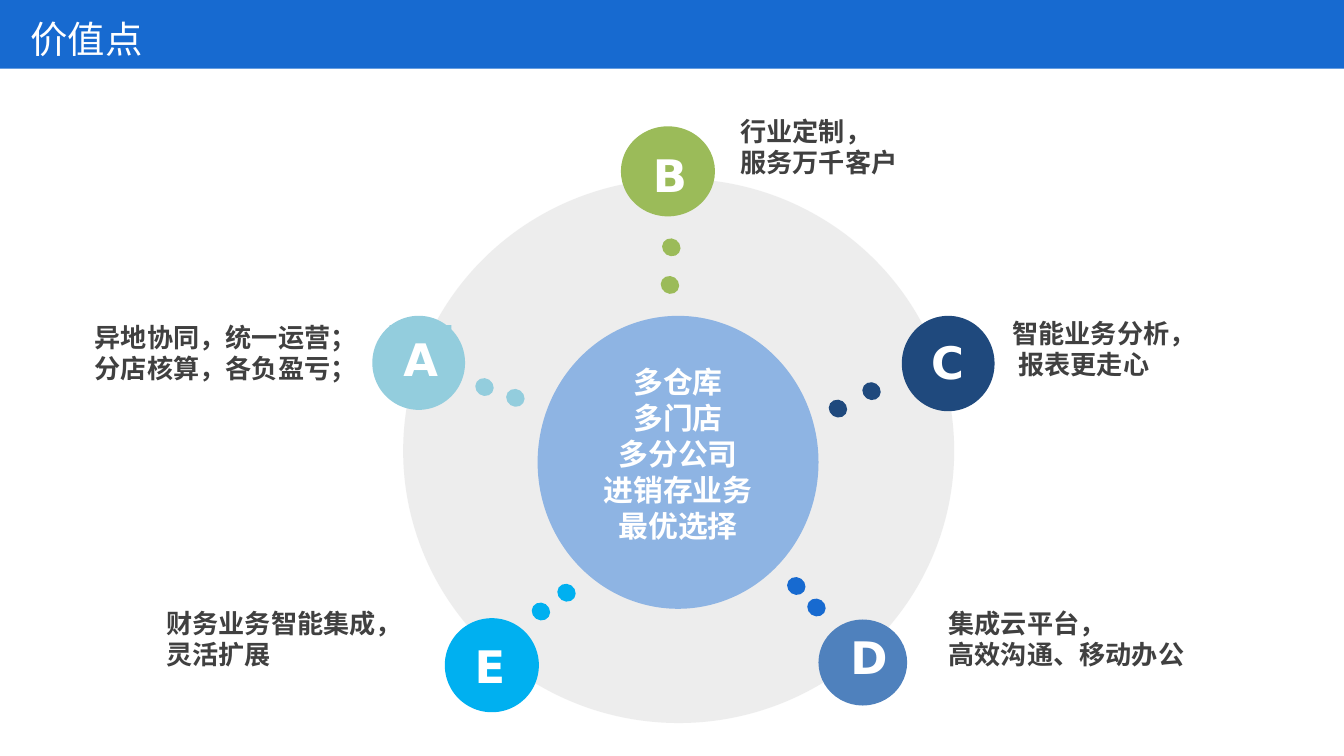
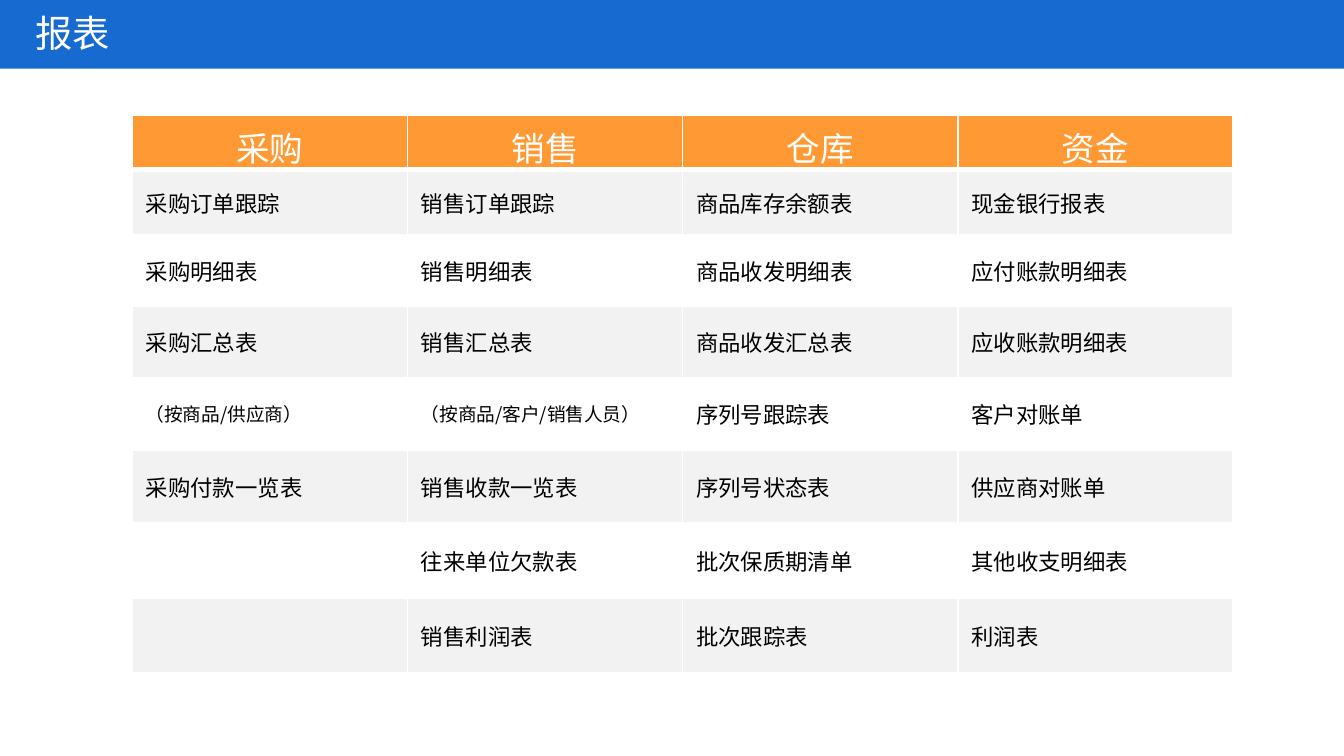
from dataclasses import dataclass

from lxml import etree
from pptx import Presentation
from pptx.dml.color import RGBColor
from pptx.enum.shapes import MSO_SHAPE
from pptx.enum.text import MSO_ANCHOR, MSO_AUTO_SIZE, PP_ALIGN
from pptx.oxml.ns import qn
from pptx.shapes.autoshape import Shape
from pptx.slide import Slide
from pptx.table import _Cell
from pptx.util import Inches, Pt

OVAL, RECTANGLE = MSO_SHAPE.OVAL, MSO_SHAPE.RECTANGLE
LEFT, CENTER = PP_ALIGN.LEFT, PP_ALIGN.CENTER
TOP, MIDDLE = MSO_ANCHOR.TOP, MSO_ANCHOR.MIDDLE
FIT_SHAPE = MSO_AUTO_SIZE.SHAPE_TO_FIT_TEXT

WHITE = RGBColor(0xFF, 0xFF, 0xFF)
BLACK = RGBColor(0x00, 0x00, 0x00)
BLUE = RGBColor(0x17, 0x6A, 0xD0)
RING_GRAY = RGBColor(0xE6, 0xE6, 0xE6)
HUB_BLUE = RGBColor(0x8E, 0xB4, 0xE3)
GREEN = RGBColor(0x9B, 0xBB, 0x59)
CYAN = RGBColor(0x00, 0xB0, 0xF0)
NAVY = RGBColor(0x1F, 0x49, 0x7D)
STEEL = RGBColor(0x4F, 0x81, 0xBD)
AQUA = RGBColor(0x93, 0xCD, 0xDD)
TEXT_GRAY = RGBColor(0x40, 0x40, 0x40)
ORANGE = RGBColor(0xFF, 0x99, 0x33)
ROW_GRAY = RGBColor(0xF2, 0xF2, 0xF2)

CHINESE_FONT = "Noto Sans CJK SC"
LETTER_FONT = "DejaVu Sans"

SLIDE_WIDTH = Inches(10)
SLIDE_HEIGHT = SLIDE_WIDTH * 9 // 16
COLUMN = SLIDE_WIDTH / 100
ROW = SLIDE_HEIGHT / 56.25


@dataclass(frozen=True)
class Area:
    left: float
    top: float
    width: float
    height: float

    def lengths(self) -> tuple[int, int, int, int]:
        return (round(self.left * COLUMN), round(self.top * ROW),
                round(self.width * COLUMN), round(self.height * ROW))


@dataclass(frozen=True)
class Style:
    size: float
    color: RGBColor
    bold: bool = False
    font: str = CHINESE_FONT


@dataclass(frozen=True)
class ValuePoint:
    letter: str
    color: RGBColor
    circle: Area
    letter_area: Area
    dot_color: RGBColor
    dots: tuple[tuple[float, float], ...]
    caption_area: Area
    caption: tuple[str, ...]
    align: PP_ALIGN = LEFT
    first_indent: float = 0
    letter_fill: RGBColor | None = None


TITLE = Style(20, WHITE)
HUB = Style(16, WHITE, True)
LETTER = Style(24, WHITE, True, LETTER_FONT)
CAPTION = Style(14, TEXT_GRAY, True)
TABLE_HEAD = Style(18, WHITE)
TABLE_BODY = Style(12, BLACK)
TABLE_NOTE = Style(10, BLACK)

BAND = Area(0, -0.1, 100, 5.2)
RING = Area(30, 13.3, 41, 40.5)
HUB_CIRCLE = Area(40, 23.5, 20.9, 21.8)
HUB_TEXT = Area(40, 26.6, 20.9, 14.5)
HUB_LINES = ("多仓库", "多门店", "多分公司", "进销存业务", "最优选择")
DOT_WIDTH, DOT_HEIGHT, DOT_ANGLE = 1.3, 1.4, 303.8

VALUE_POINTS = (
    ValuePoint("A", AQUA, Area(27.7, 23.5, 6.9, 7), Area(29, 24.2, 4.6, 5),
               AQUA, ((35.4, 28.1), (37.7, 28.9)),
               Area(5.9, 23.4, 21.8, 8.1),
               ("异地协同，统一运营；分店核算，各负盈亏；",), CENTER,
               letter_fill=AQUA),
    ValuePoint("B", GREEN, Area(46.2, 9.4, 7, 6.7), Area(47.6, 10.5, 4.5, 5),
               GREEN, ((49.3, 17.7), (49.2, 20.5)),
               Area(54.1, 8.1, 18.8, 5.7), ("行业定制，", "服务万千客户")),
    ValuePoint("C", NAVY, Area(67.1, 23.5, 6.9, 7.1), Area(68.3, 24.4, 4.4, 5),
               NAVY, ((64.2, 28.4), (61.7, 29.7)),
               Area(70.6, 23.1, 20.1, 5.7), ("智能业务分析，", "报表更走心"),
               CENTER, first_indent=3),
    ValuePoint("D", STEEL, Area(60.9, 46.1, 6.6, 6.4), Area(62.2, 46.4, 4.9, 5),
               BLUE, ((60.1, 44.5), (58.6, 42.9)),
               Area(69.6, 44.7, 23.3, 5.7), ("集成云平台，", "高效沟通、移动办公")),
    ValuePoint("E", CYAN, Area(33.1, 46, 7, 7), Area(34.3, 47, 4.3, 5),
               CYAN, ((39.6, 44.8), (41.5, 43.4)),
               Area(11.4, 44.7, 20.4, 8.1), ("财务业务智能集成，灵活扩展",),
               letter_fill=CYAN),
)

TABLE_AREA = Area(9.85, 8.6, 81.9, 41.1)
ROW_HEIGHTS = (3.6, 4.9, 5.3, 5.3, 5.4, 5.4, 5.6, 5.6)
REPORTS = (
    ("采购", "销售", "仓库", "资金"),
    ("采购订单跟踪", "销售订单跟踪", "商品库存余额表", "现金银行报表"),
    ("采购明细表", "销售明细表", "商品收发明细表", "应付账款明细表"),
    ("采购汇总表", "销售汇总表", "商品收发汇总表", "应收账款明细表"),
    ("（按商品/供应商）", "（按商品/客户/销售人员）", "序列号跟踪表", "客户对账单"),
    ("采购付款一览表", "销售收款一览表", "序列号状态表", "供应商对账单"),
    ("", "往来单位欠款表", "批次保质期清单", "其他收支明细表"),
    ("", "销售利润表", "批次跟踪表", "利润表"),
)


def write(frame, lines: tuple[str, ...], style: Style, align: PP_ALIGN = LEFT) -> None:
    for index, line in enumerate(lines):
        para = frame.add_paragraph() if index else frame.paragraphs[0]
        para.alignment = align
        span = para.add_run()
        span.text = line
        font = span.font
        font.size, font.bold, font.name = Pt(style.size), style.bold, style.font
        font.color.rgb = style.color
        east_asian = etree.SubElement(span._r.get_or_add_rPr(), qn("a:ea"))
        east_asian.set("typeface", style.font)


def add_text(page: Slide, area: Area, lines: tuple[str, ...], style: Style,
             align: PP_ALIGN = LEFT, wrap: bool = True, fit: bool = True) -> Shape:
    box = page.shapes.add_textbox(*area.lengths())
    frame = box.text_frame
    if fit:
        frame.auto_size = FIT_SHAPE
    frame.word_wrap = wrap
    write(frame, lines, style, align)
    return box


def add_filled(page: Slide, kind: MSO_SHAPE, area: Area, color: RGBColor) -> Shape:
    shape = page.shapes.add_shape(kind, *area.lengths())
    shape.shadow.inherit = False
    shape.fill.solid()
    shape.fill.fore_color.rgb = color
    shape.line.fill.background()
    return shape


def add_page(deck: Presentation, title: str, area: Area, anchor: MSO_ANCHOR) -> Slide:
    page = deck.slides.add_slide(deck.slide_layouts[6])
    add_filled(page, RECTANGLE, BAND, BLUE)
    box = add_text(page, area, (title,), TITLE, fit=False)
    box.text_frame.vertical_anchor = anchor
    return page


def draw_value_point(page: Slide, point: ValuePoint) -> None:
    add_filled(page, OVAL, point.circle, point.color)
    letter = add_text(page, point.letter_area, (point.letter,), LETTER, CENTER, wrap=False)
    if point.letter_fill is not None:
        letter.fill.solid()
        letter.fill.fore_color.rgb = point.letter_fill
    for left, top in point.dots:
        dot = add_filled(page, OVAL, Area(left, top, DOT_WIDTH, DOT_HEIGHT), point.dot_color)
        dot.rotation = DOT_ANGLE
    caption = add_text(page, point.caption_area, point.caption, CAPTION, point.align)
    if point.first_indent:
        first = caption.text_frame.paragraphs[0]._p.get_or_add_pPr()
        first.set("marL", str(round(point.first_indent * COLUMN)))
        first.set("indent", "0")


def draw_values(deck: Presentation) -> None:
    page = add_page(deck, "价值点", Area(1.3, 0, 78, 5.7), MIDDLE)
    ring = add_filled(page, OVAL, RING, RING_GRAY)
    ring_color = ring.fill._xPr.find(qn("a:solidFill"))[0]
    etree.SubElement(ring_color, qn("a:alpha")).set("val", "70000")
    add_filled(page, OVAL, HUB_CIRCLE, HUB_BLUE)
    add_text(page, HUB_TEXT, HUB_LINES, HUB, CENTER)
    for point in VALUE_POINTS:
        draw_value_point(page, point)


def set_borders(cell: _Cell, bottom: float) -> None:
    properties = cell._tc.get_or_add_tcPr()
    widths = {"a:lnL": 1, "a:lnR": 1, "a:lnT": 1, "a:lnB": bottom}
    for index, (tag, width) in enumerate(widths.items()):
        line = etree.Element(qn(tag), w=str(Pt(width)))
        fill = etree.SubElement(line, qn("a:solidFill"))
        etree.SubElement(fill, qn("a:srgbClr")).set("val", str(WHITE))
        properties.insert(index, line)


def fill_cell(cell: _Cell, text: str, row: int) -> None:
    heading = row == 0
    cell.fill.solid()
    cell.fill.fore_color.rgb = ORANGE if heading else ROW_GRAY if row % 2 else WHITE
    cell.vertical_anchor = TOP if heading else MIDDLE
    if text:
        note = text.startswith("（")
        style = TABLE_HEAD if heading else TABLE_NOTE if note else TABLE_BODY
        write(cell.text_frame, (text,), style, CENTER if heading else LEFT)
    set_borders(cell, 3 if heading else 1)


def draw_reports(deck: Presentation) -> None:
    page = add_page(deck, "报表", Area(1.65, 0.3, 43, 4.4), TOP)
    table = page.shapes.add_table(len(REPORTS), len(REPORTS[0]), *TABLE_AREA.lengths()).table
    table.first_row = table.horz_banding = False
    for row, (height, texts) in enumerate(zip(ROW_HEIGHTS, REPORTS)):
        table.rows[row].height = round(height * ROW)
        for column, text in enumerate(texts):
            fill_cell(table.cell(row, column), text, row)


def main() -> None:
    deck = Presentation()
    deck.slide_width, deck.slide_height = SLIDE_WIDTH, SLIDE_HEIGHT
    draw_values(deck)
    draw_reports(deck)
    deck.save("out.pptx")


if __name__ == "__main__":
    main()
